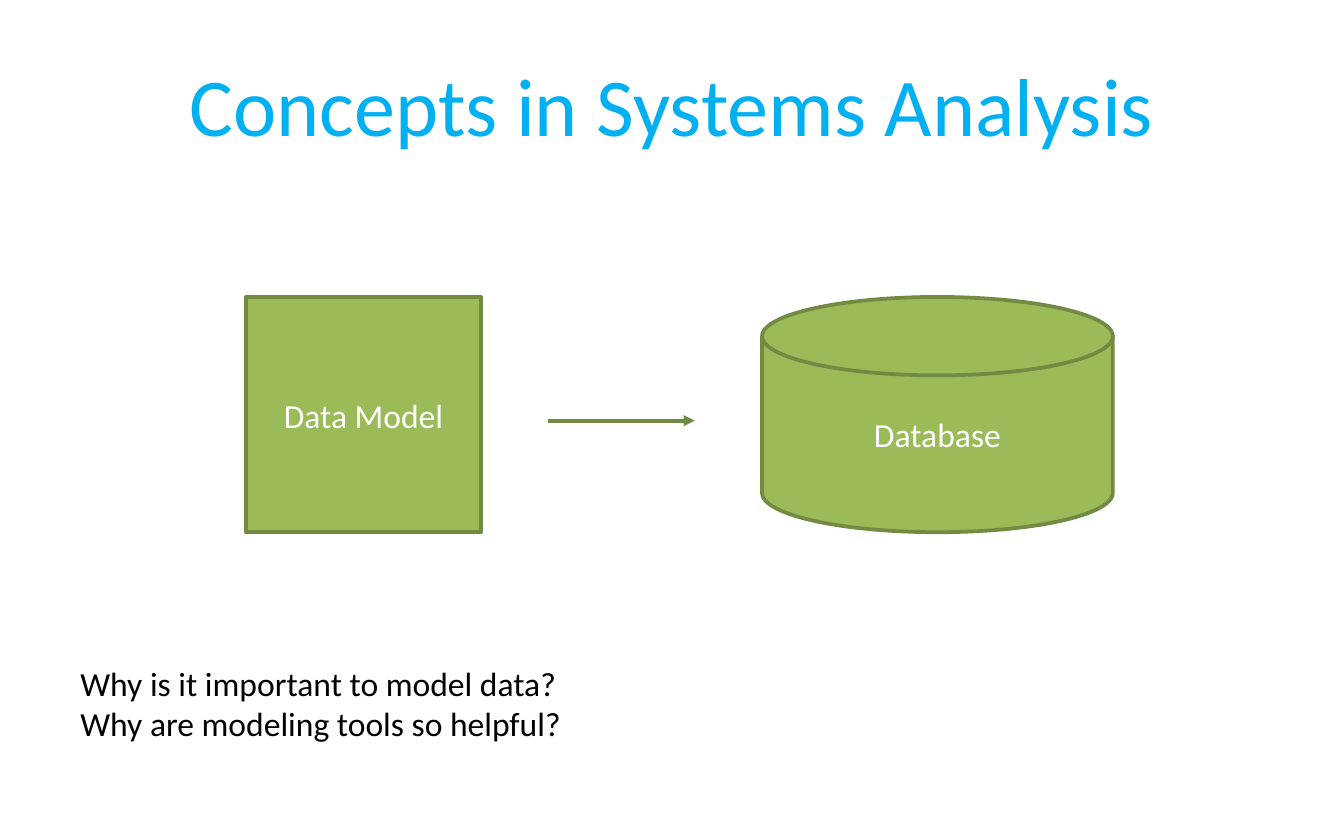
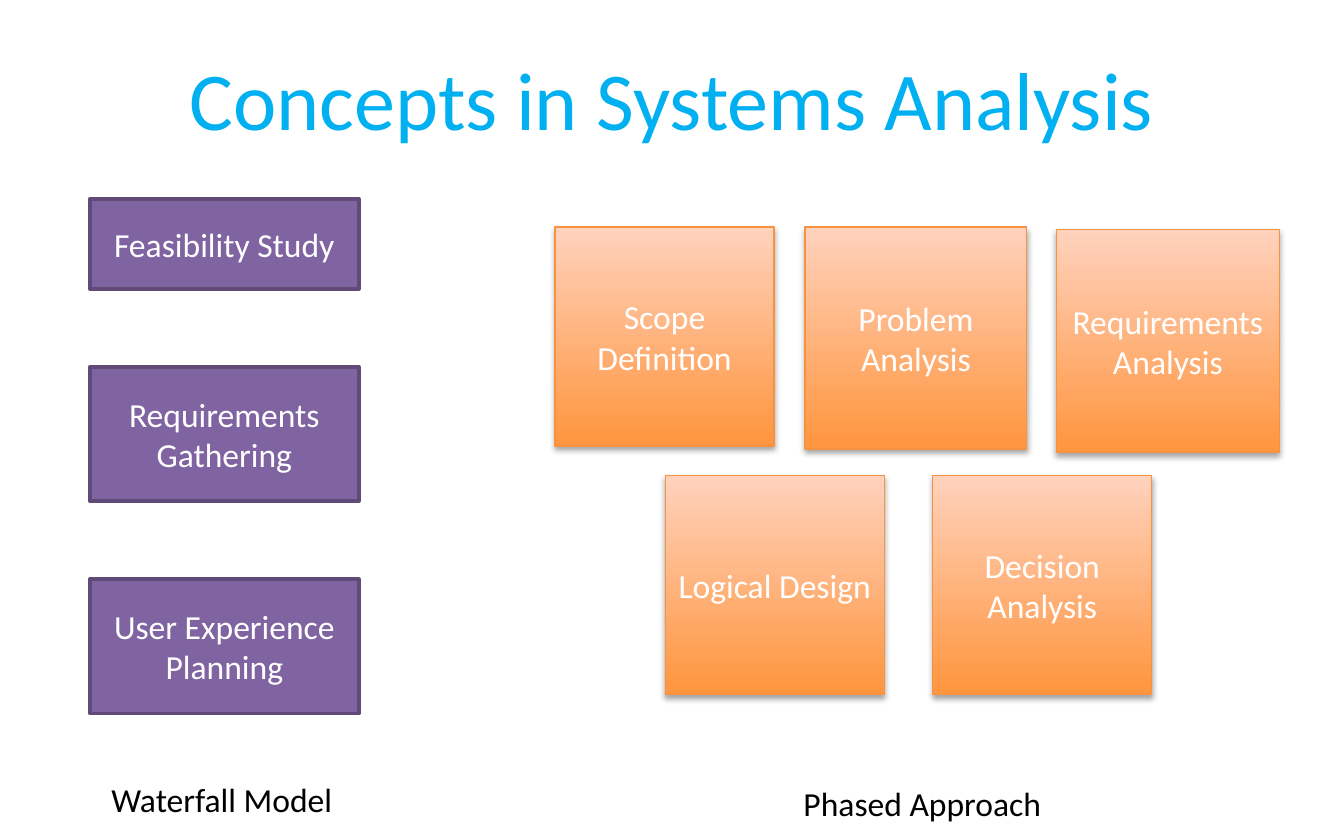
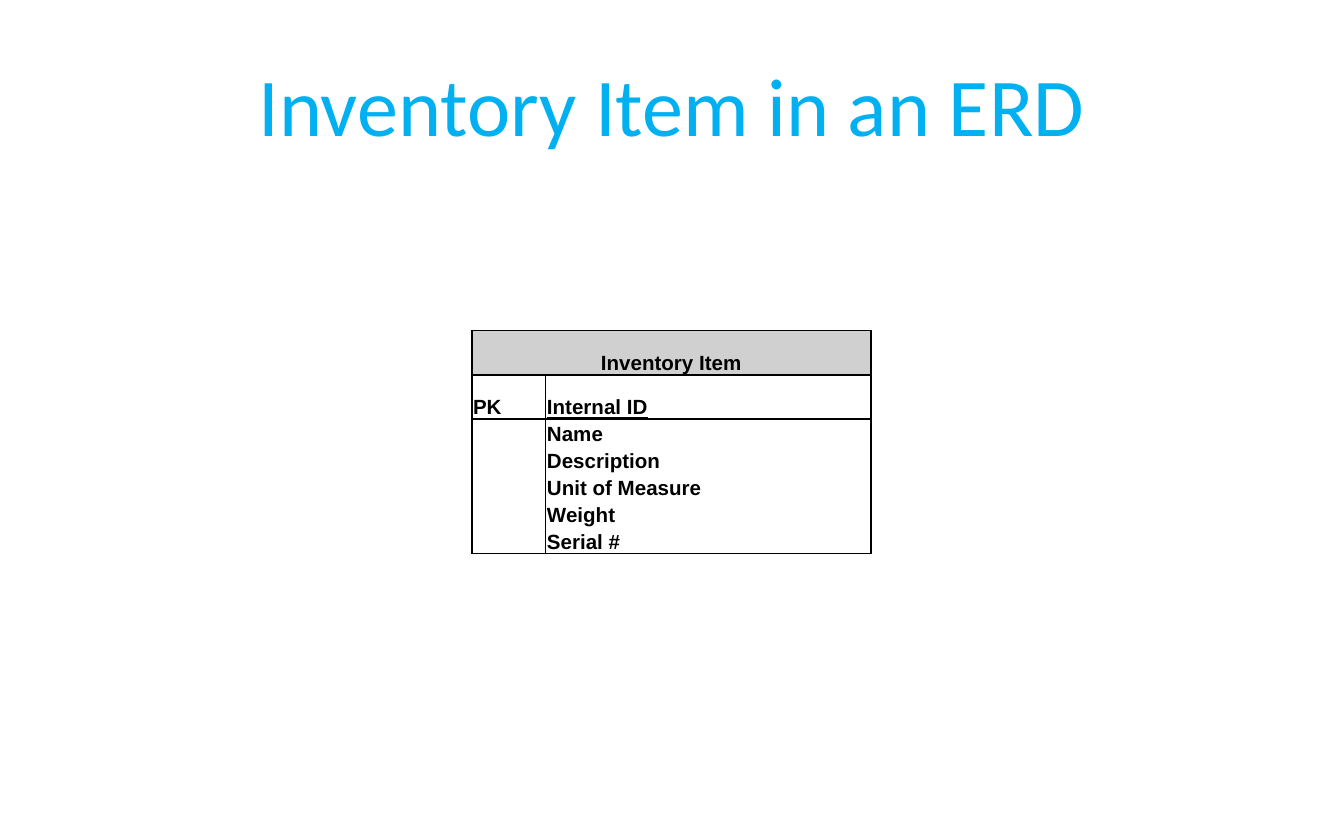
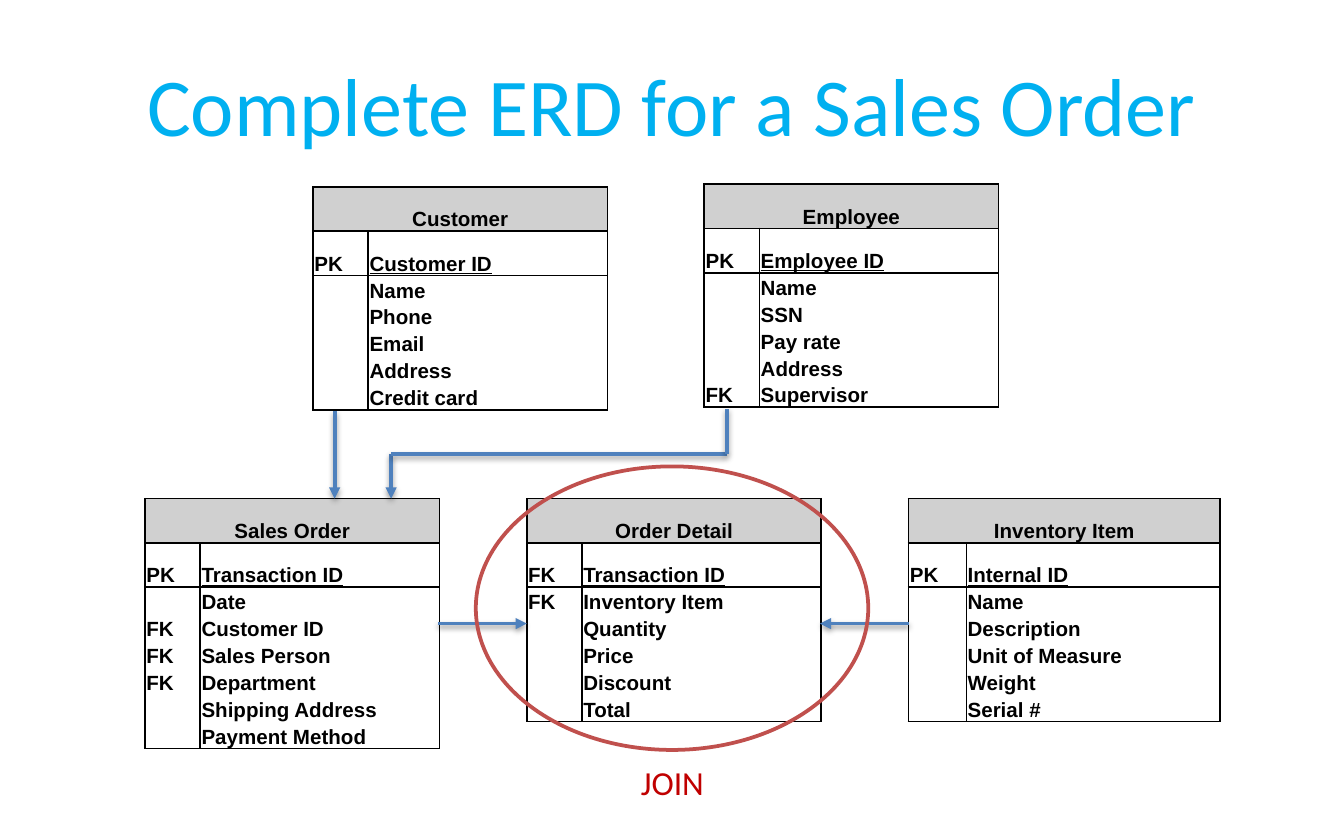
from lxml.etree import SubElement
from pptx import Presentation
from pptx.dml.color import RGBColor
from pptx.enum.shapes import MSO_CONNECTOR, MSO_SHAPE
from pptx.enum.text import MSO_ANCHOR, MSO_AUTO_SIZE, PP_ALIGN
from pptx.oxml.ns import qn
from pptx.util import Inches, Pt

TITLE_BLUE, BLACK, WHITE = "00B0F0", "000000", "FFFFFF"
GREEN, DARK_GREEN = "9BBB59", "738A42"
PURPLE, DARK_PURPLE = "8064A2", "5F4A78"
ORANGE, PALE_ORANGE, ORANGE_EDGE = "FF953E", "FFD2BD", "F69240"
ARROW_BLUE, RING_RED, JOIN_RED = "4F81BD", "C0504D", "C00000"
HEADER_GRAY = "D0D0D0"
HEAD_ROW, FIELD_ROW = 0.33, 0.2

INVENTORY_ITEM = [("PK", "Internal ID"), ("", "Name"), ("", "Description"),
                  ("", "Unit of Measure"), ("", "Weight"), ("", "Serial #")]
CUSTOMER = [("PK", "Customer ID"), ("", "Name"), ("", "Phone"),
            ("", "Email"), ("", "Address"), ("", "Credit card")]
EMPLOYEE = [("PK", "Employee ID"), ("", "Name"), ("", "SSN"),
            ("", "Pay rate"), ("", "Address"), ("FK", "Supervisor")]
SALES_ORDER = [("PK", "Transaction ID"), ("", "Date"), ("FK", "Customer ID"),
               ("FK", "Sales Person"), ("FK", "Department"),
               ("", "Shipping Address"), ("", "Payment Method")]
ORDER_DETAIL = [("FK", "Transaction ID"), ("FK", "Inventory Item"),
                ("", "Quantity"), ("", "Price"), ("", "Discount"), ("", "Total")]


def rgb(color):
    """Turn a hex string into a colour."""
    return RGBColor.from_string(color)


def style_paragraph(p, size, color, name="Calibri", align=PP_ALIGN.LEFT):
    """Set the font and alignment of a paragraph."""
    p.alignment = align
    p.font.size = Pt(size)
    p.font.name = name
    p.font.color.rgb = rgb(color)


def set_line(line, color, width=2):
    """Set the colour and width of a line."""
    line.color.rgb = rgb(color)
    line.width = Pt(width)


def add_shadow(shape, alpha, distance):
    """Give a shape a soft shadow that falls straight down."""
    effects = SubElement(shape._element.spPr, qn("a:effectLst"))
    outer = SubElement(effects, qn("a:outerShdw"), blurRad=str(Pt(3.1)),
                       dist=str(Pt(distance)), dir="5400000", rotWithShape="0")
    color = SubElement(outer, qn("a:srgbClr"), val=BLACK)
    SubElement(color, qn("a:alpha"), val=str(alpha * 1000))


def add_title_slide(prs, title, top=0.25):
    """Add a blank slide with a centred title."""
    s = prs.slides.add_slide(prs.slide_layouts[6])
    tf = s.shapes.add_textbox(Inches(0.5), Inches(top), Inches(9), Inches(1.04)).text_frame
    tf.word_wrap = True
    tf.vertical_anchor = MSO_ANCHOR.MIDDLE
    tf.text = title
    style_paragraph(tf.paragraphs[0], 44, TITLE_BLUE, align=PP_ALIGN.CENTER)
    return s


def add_label(s, text, left, top, width, height=0.4, color=BLACK):
    """Add a text box that fits its lines."""
    tf = s.shapes.add_textbox(Inches(left), Inches(top), Inches(width), Inches(height)).text_frame
    tf.word_wrap = False
    tf.auto_size = MSO_AUTO_SIZE.SHAPE_TO_FIT_TEXT
    tf.text = text
    for p in tf.paragraphs:
        style_paragraph(p, 18, color)


def add_box(s, text, left, top, width, height, fill, edge, kind=MSO_SHAPE.RECTANGLE):
    """Add a filled shape with white centred text."""
    sp = s.shapes.add_shape(kind, Inches(left), Inches(top), Inches(width), Inches(height))
    sp.fill.solid()
    sp.fill.fore_color.rgb = rgb(fill)
    set_line(sp.line, edge)
    sp.shadow.inherit = False
    sp.text_frame.text = text
    style_paragraph(sp.text_frame.paragraphs[0], 18, WHITE, align=PP_ALIGN.CENTER)


def add_phase(s, text, left, top, size):
    """Add a shaded orange square for one phase."""
    sp = s.shapes.add_shape(MSO_SHAPE.RECTANGLE, Inches(left), Inches(top),
                            Inches(size), Inches(size))
    sp.fill.gradient()
    sp.fill.gradient_angle = 90
    for stop, color in zip(sp.fill.gradient_stops, (ORANGE, PALE_ORANGE)):
        stop.color.rgb = rgb(color)
    set_line(sp.line, ORANGE_EDGE, 0.75)
    add_shadow(sp, 35, 1.8)
    sp.text_frame.text = text
    style_paragraph(sp.text_frame.paragraphs[0], 18, WHITE, align=PP_ALIGN.CENTER)


def add_line(s, start, end, color, arrow=True, shadow=True):
    """Add a straight line, with an arrowhead at its end if wanted."""
    line = s.shapes.add_connector(MSO_CONNECTOR.STRAIGHT, *map(Inches, start + end))
    set_line(line.line, color)
    if arrow:
        SubElement(line.line._get_or_add_ln(), qn("a:tailEnd"), type="triangle")
    if shadow:
        add_shadow(line, 38, 1.6)
    else:
        SubElement(line._element.spPr, qn("a:effectLst"))


def set_borders(cell, sides):
    """Draw the named sides of a cell in black and clear the others."""
    tc_pr = cell._tc.get_or_add_tcPr()
    for i, side in enumerate("LRTB"):
        ln = tc_pr.makeelement(qn(f"a:ln{side}"), {"w": str(Pt(1))})
        tc_pr.insert(i, ln)
        if side in sides:
            SubElement(SubElement(ln, qn("a:solidFill")), qn("a:srgbClr"), val=BLACK)
        else:
            SubElement(ln, qn("a:noFill"))


def fill_cell(cell, text, fill, sides, align=PP_ALIGN.LEFT, underline=False):
    """Write and format one table cell."""
    cell.margin_left = cell.margin_right = cell.margin_top = Inches(0.01)
    cell.margin_bottom = 0
    cell.vertical_anchor = MSO_ANCHOR.BOTTOM
    cell.fill.solid()
    cell.fill.fore_color.rgb = rgb(fill)
    set_borders(cell, sides)
    cell.text = text
    p = cell.text_frame.paragraphs[0]
    style_paragraph(p, 11, BLACK, "Arial", align)
    p.font.bold = True
    p.font.underline = underline
    SubElement(p._p, qn("a:endParaRPr"), sz="1100")


def add_entity(s, name, fields, left, top, key_width=0.41, field_width=1.78):
    """Add an entity table: name, key row, then the other fields."""
    heights = [HEAD_ROW] * 2 + [FIELD_ROW] * (len(fields) - 1)
    table = s.shapes.add_table(len(heights), 2, Inches(left), Inches(top),
                               Inches(key_width + field_width), Inches(sum(heights))).table
    table.first_row = table.horz_banding = False
    for column, width in zip(table.columns, (key_width, field_width)):
        column.width = Inches(width)
    for row, height in zip(table.rows, heights):
        row.height = Inches(height)
    for col, text in enumerate((name, "")):
        fill_cell(table.cell(0, col), text, HEADER_GRAY, "LRTB", PP_ALIGN.CENTER)
    table.cell(0, 0).merge(table.cell(0, 1))
    for row, field in enumerate(fields, 1):
        sides = "LR" + "T" * (row <= 2) + "B" * (row in (1, len(fields)))
        for col, text in enumerate(field):
            fill_cell(table.cell(row, col), text, WHITE, sides, underline=row == col == 1)


def build_data_model(prs):
    """Show a data model leading to a database."""
    s = add_title_slide(prs, "Concepts in Systems Analysis")
    add_box(s, "Data Model", 1.83, 2.21, 1.75, 1.75, GREEN, DARK_GREEN)
    add_box(s, "Database", 5.67, 2.21, 2.61, 1.75, GREEN, DARK_GREEN,
            MSO_SHAPE.FLOWCHART_MAGNETIC_DISK)
    add_line(s, (4.08, 3.13), (5.17, 3.13), DARK_GREEN, shadow=False)
    add_label(s, "Why is it important to model data?\nWhy are modeling tools so helpful?",
              0.5, 4.88, 3.84, 0.71)


def build_approaches(prs):
    """Compare the waterfall model with the phased approach."""
    s = add_title_slide(prs, "Concepts in Systems Analysis", 0.21)
    for text, top, height in [("Feasibility Study", 1.48, 0.67),
                              ("Requirements Gathering", 2.73, 1),
                              ("User Experience Planning", 4.31, 1)]:
        add_box(s, text, 0.67, top, 2, height, PURPLE, DARK_PURPLE)
    add_label(s, "Waterfall Model", 0.73, 5.75, 1.86)
    for phase in [("Decision Analysis", 6.94, 3.54, 1.63),
                  ("Logical Design", 4.95, 3.54, 1.63),
                  ("Requirements Analysis", 7.86, 1.71, 1.66),
                  ("Problem Analysis", 5.99, 1.69, 1.65),
                  ("Scope Definition", 4.13, 1.69, 1.63)]:
        add_phase(s, *phase)
    add_label(s, "Phased Approach", 5.88, 5.78, 1.99)


def build_inventory_item(prs):
    """Show the inventory item entity alone."""
    s = add_title_slide(prs, "Inventory Item in an ERD")
    add_entity(s, "Inventory Item", INVENTORY_ITEM, 3.51, 2.46, 0.55, 2.42)


def build_sales_order(prs):
    """Show all entities of a sales order and how they join."""
    s = add_title_slide(prs, "Complete ERD for a Sales Order")
    add_entity(s, "Inventory Item", INVENTORY_ITEM, 6.76, 3.71, 0.43, 1.89)
    add_entity(s, "Customer", CUSTOMER, 2.33, 1.39)
    add_entity(s, "Sales Order", SALES_ORDER, 1.08, 3.71)
    add_entity(s, "Order Detail", ORDER_DETAIL, 3.92, 3.71)
    add_entity(s, "Employee", EMPLOYEE, 5.24, 1.37)
    for start, end, arrow in [((2.49, 3.06), (2.49, 3.71), True),
                              ((2.91, 3.38), (2.91, 3.71), True),
                              ((2.91, 3.38), (5.41, 3.38), False),
                              ((5.41, 3.38), (5.41, 3.04), False),
                              ((3.26, 4.64), (3.92, 4.64), True),
                              ((6.76, 4.64), (6.1, 4.64), True)]:
        add_line(s, start, end, ARROW_BLUE, arrow)
    ring = s.shapes.add_shape(MSO_SHAPE.OVAL, Inches(3.54), Inches(3.47),
                              Inches(2.92), Inches(2.11))
    ring.fill.background()
    set_line(ring.line, RING_RED)
    ring.shadow.inherit = False
    add_label(s, "JOIN", 4.67, 5.62, 0.68, color=JOIN_RED)


def main():
    """Build the presentation and save it."""
    prs = Presentation()
    prs.slide_width, prs.slide_height = Inches(10), Inches(6.25)
    build_data_model(prs)
    build_approaches(prs)
    build_inventory_item(prs)
    build_sales_order(prs)
    prs.save("out.pptx")


if __name__ == "__main__":
    main()
